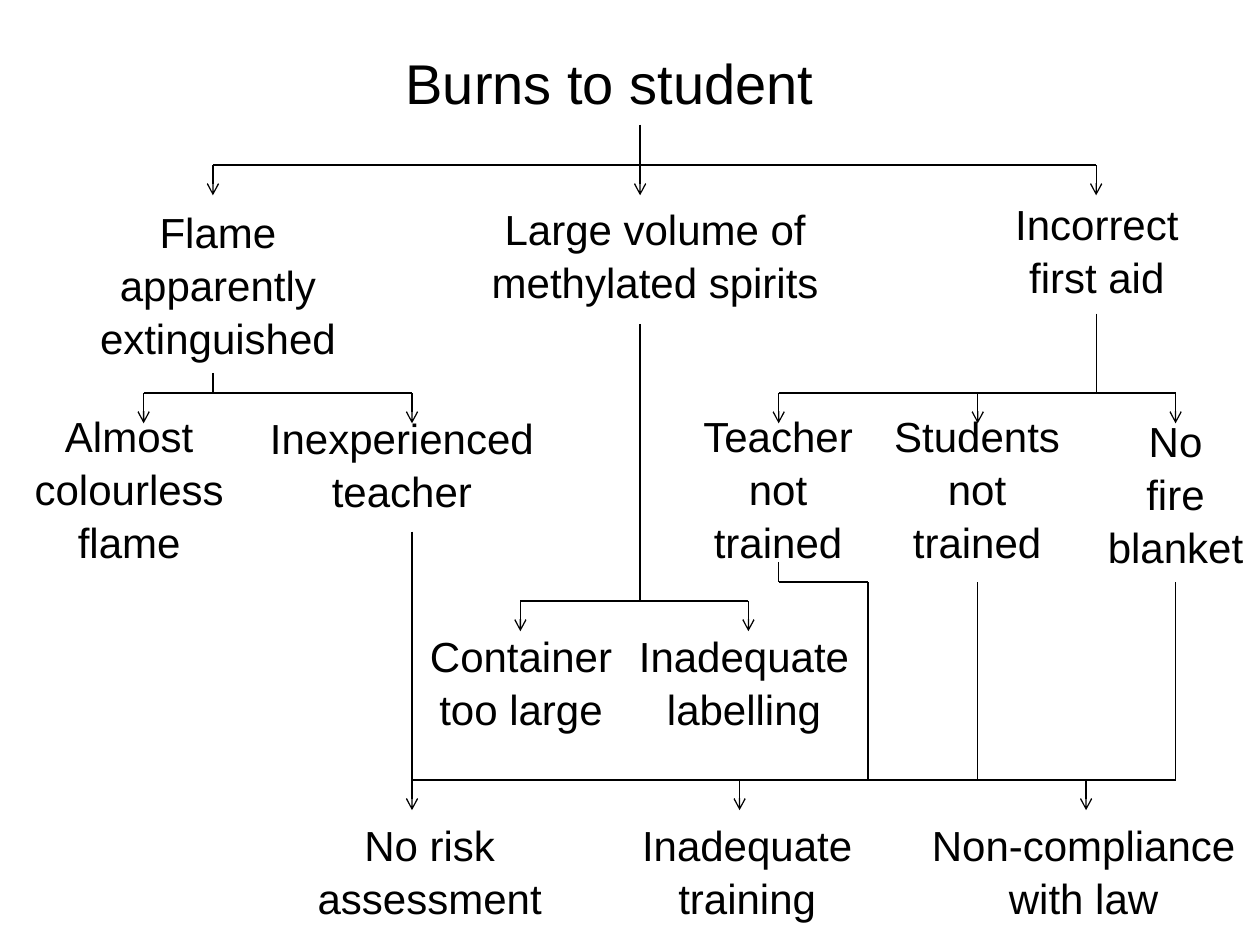
import pptx
import pptx.util
import pptx.dml.color
import pptx.enum.shapes
import pptx.enum.text
import pptx.oxml.ns
from lxml import etree
from pptx.util import Inches

COLOURS = {"ink": "000000", "paper": "FFFFFF"}
FONT = "Arial"
DROP = 0.24  # length of the arrows below each bar

# Each cause: its lines of text and its box (left, top, width, height)
CAUSES = [
    (["Flame", "apparently", "extinguished"], (0.35, 1.62, 2.76, 1.26)),
    (["Large volume of", "methylated spirits"], (3.27, 1.62, 3.86, 0.79)),
    (["Incorrect", "first aid"], (7.68, 1.62, 2.05, 0.71)),
    (["Almost", "colourless", "flame"], (0.12, 3.36, 1.81, 1.02)),
    (["Inexperienced", "teacher"], (2.01, 3.28, 2.36, 0.79)),
    (["Teacher", "not", "trained"], (5.39, 3.2, 1.57, 1.34)),
    (["Students", "not", "trained"], (6.97, 3.2, 1.57, 1.34)),
    (["No", "fire", "blanket"], (8.66, 3.2, 1.34, 1.42)),
    (["Container", "too large"], (3.27, 5.01, 1.73, 0.79)),
    (["Inadequate", "labelling"], (4.92, 5.01, 1.97, 0.79)),
    (["No risk assessment"], (2.01, 6.51, 2.8, 0.79)),
    (["Inadequate", "training"], (4.53, 6.51, 2.8, 0.79)),
    (["Non-compliance", "with law"], (7.2, 6.51, 2.8, 0.79)),
]

# Each branch: its box, its stems (x, top) and its arrows (x), from the box corner
BRANCHES = [
    ((1.69, 0.99, 7.01, 0.56), [(3.39, 0)], [0, 3.39, 7.01]),
    ((1.14, 2.96, 2.13, 0.4), [(0.55, 0)], [0, 2.13]),
    ((6.18, 2.49, 3.15, 0.87), [(2.52, 0)], [0, 1.58, 3.15]),
    ((4.13, 2.57, 1.81, 2.44), [(0.95, 0)], [0, 1.81]),
    ((3.27, 4.22, 6.06, 2.21),
     [(0, 0), (3.62, 0.4), (4.49, 0.4), (6.06, 0.4)], [0, 2.6, 5.35]),
]


def colour(name):
    return pptx.dml.color.RGBColor.from_string(COLOURS[name])


def write_lines(frame, lines, size):
    frame.word_wrap = True
    frame.vertical_anchor = pptx.enum.text.MSO_ANCHOR.MIDDLE
    for index, line in enumerate(lines):
        para = frame.paragraphs[0] if index == 0 else frame.add_paragraph()
        para.text = line
        para.alignment = pptx.enum.text.PP_ALIGN.CENTER
        para.font.name = FONT
        para.font.size = pptx.util.Pt(size)
        para.font.color.rgb = colour("ink")
        para.line_spacing = 1.05


def add_title(page, box):
    title = page.shapes.title
    title.left, title.top, title.width, title.height = map(Inches, box)
    write_lines(title.text_frame, ["Burns to student"], 32)


def add_cause(page, lines, box):
    label = page.shapes.add_textbox(*map(Inches, box))
    write_lines(label.text_frame, lines, 24)


def add_line(page, start, end, arrow=False):
    line = page.shapes.add_connector(
        pptx.enum.shapes.MSO_CONNECTOR.STRAIGHT, *map(Inches, start + end))
    line.line.color.rgb = colour("ink")
    line.line.width = pptx.util.Pt(0.75)
    if arrow:
        outline = line.line._get_or_add_ln()
        etree.SubElement(outline, pptx.oxml.ns.qn("a:tailEnd"), type="arrow")
    etree.SubElement(line._element.spPr, pptx.oxml.ns.qn("a:effectLst"))


def add_branch(page, box, stems, arrows):
    left, top, width, height = box
    bottom = top + height
    bar = bottom - DROP
    for x, y in stems:
        add_line(page, (left + x, top + y), (left + x, bar))
    add_line(page, (left, bar), (left + width, bar))
    for x in arrows:
        add_line(page, (left + x, bar), (left + x, bottom), arrow=True)


def add_elbow(page, box):
    left, top, width, height = box
    corner = (left, top + height)
    add_line(page, (left, top), corner)
    add_line(page, corner, (left + width, top + height))


def main():
    deck = pptx.Presentation()
    deck.slide_width, deck.slide_height = Inches(10), Inches(7.5)
    page = deck.slides.add_slide(deck.slide_layouts[5])
    page.background.fill.solid()
    page.background.fill.fore_color.rgb = colour("paper")

    # Title and causes
    add_title(page, (2.48, 0.36, 4.72, 0.56))
    for lines, box in CAUSES:
        add_cause(page, lines, box)

    # Branches, and the step from the teacher's cause to its stem
    for box, stems, arrows in BRANCHES:
        add_branch(page, box, stems, arrows)
    add_elbow(page, (6.18, 4.46, 0.71, 0.16))

    deck.save("out.pptx")


if __name__ == "__main__":
    main()
